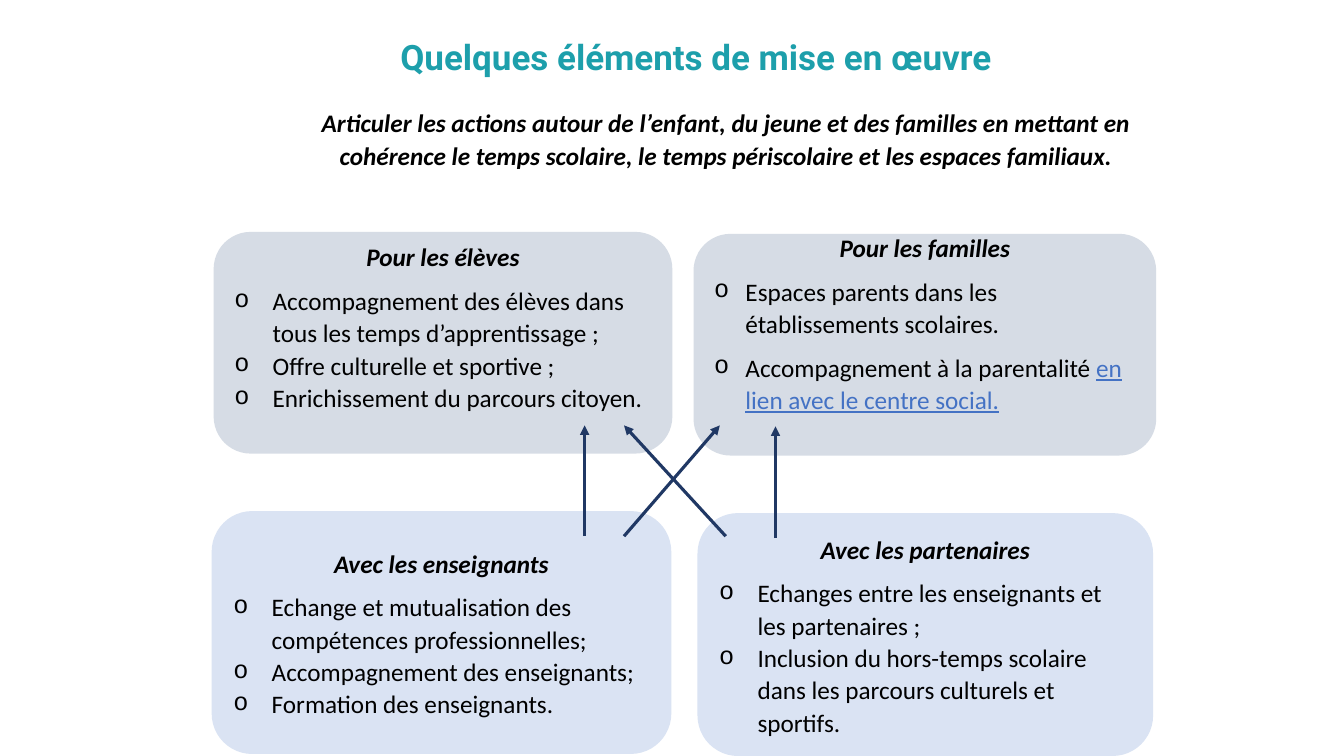
"""Build the slide on linking actions for pupils, families, teachers and partners."""
from lxml import etree
from pptx import Presentation, util as u
from pptx.dml.color import RGBColor
from pptx.enum import shapes, text
from pptx.oxml.ns import qn

THEME = dict(title="1D9FAB", ink="000000", link="4472C4", arrow="203864",
             top="D6DCE5", bottom="DAE3F3", body="Calibri", head="Roboto",
             title_size=25, size=18, line=2.25)

prs = Presentation()
prs.slide_width, prs.slide_height = u.Inches(13.33), u.Inches(7.5)
s = prs.slides.add_slide(prs.slide_layouts[6])
COL, ROW = prs.slide_width / 100, prs.slide_height / 100


def place(x, y, w, h):
    """Turn percentages of the slide into lengths."""
    return int(x * COL), int(y * ROW), int(w * COL), int(h * ROW)


def add_paragraph(tf, runs, heading=False, indent=0, after=0, spacing=1.07,
                  size=THEME["size"], font=THEME["body"], italic=True, color=THEME["ink"]):
    """Add a centred heading or a bulleted item made of (text, is_link) runs."""
    p = tf.paragraphs[0] if not tf.paragraphs[0].runs else tf.add_paragraph()
    p.alignment = text.PP_ALIGN.CENTER if heading else text.PP_ALIGN.LEFT
    p.line_spacing, p.space_after = spacing, u.Pt(after)
    if indent:
        pPr = p._p.get_or_add_pPr()
        pPr.set("marL", str(u.Inches(indent)))
        pPr.set("indent", str(-u.Inches(indent)))
        etree.SubElement(pPr, qn("a:buFont")).set("typeface", "Courier New")
        etree.SubElement(pPr, qn("a:buChar")).set("char", "o")
    for words, is_link in runs:
        r = p.add_run()
        r.text = words
        r.font.name, r.font.size = font, u.Pt(size)
        r.font.bold, r.font.italic = heading, heading and italic
        r.font.underline = is_link
        r.font.color.rgb = RGBColor.from_string(THEME["link"] if is_link else color)


cards = [
    ("bottom", (51.9, 67.87, 33.9, 32.13), 0.05, 0.38, 0, "Avec les partenaires", [
        [("Echanges entre les enseignants et les partenaires ;", False)],
        [("Inclusion du hors-temps scolaire dans les parcours culturels et sportifs.", False)]]),
    ("bottom", (15.75, 67.6, 34.2, 32.13), 0.05, 0.38, 0, "Avec les enseignants", [
        [("Echange et mutualisation des compétences professionnelles;", False)],
        [("Accompagnement des enseignants;", False)],
        [("Formation des enseignants.", False)]]),
    ("top", (51.6, 30.93, 34.43, 29.33), 0.49, 0.31, 8, "Pour les familles", [
        [("Espaces parents dans les établissements scolaires.", False)],
        [("Accompagnement à la parentalité ", False), ("en lien avec le centre social.", True)]]),
    ("top", (15.9, 30.67, 34.13, 29.33), 0.38, 0.38, 0, "Pour les élèves", [
        [("Accompagnement des élèves dans tous les temps d’apprentissage ;", False)],
        [("Offre culturelle et sportive ;", False)],
        [("Enrichissement du parcours citoyen.", False)]]),
]
for fill, box, inset, indent, after, heading, items in cards:
    sp = s.shapes.add_shape(shapes.MSO_SHAPE.ROUNDED_RECTANGLE, *place(*box))
    sp.shadow.inherit = False
    sp.fill.solid()
    sp.fill.fore_color.rgb = RGBColor.from_string(THEME[fill])
    sp.line.fill.background()
    tf = sp.text_frame
    tf.word_wrap = True
    tf.vertical_anchor = text.MSO_ANCHOR.MIDDLE
    tf.margin_bottom = u.Inches(inset)
    add_paragraph(tf, [(heading, False)], heading=True, after=8)
    for runs in items:
        add_paragraph(tf, runs, indent=indent, after=after)

banners = [
    ((6.98, 4, 89.57, 7.6), text.MSO_ANCHOR.MIDDLE, "Quelques éléments de mise en œuvre",
     dict(size=THEME["title_size"], font=THEME["head"], color=THEME["title"],
          italic=False, spacing=0.9)),
    ((20.48, 13.33, 67.07, 9.87), text.MSO_ANCHOR.TOP,
     "Articuler les actions autour de l’enfant, du jeune et des familles en mettant en "
     "cohérence le temps scolaire, le temps périscolaire et les espaces familiaux.",
     dict(after=8)),
]
for box, anchor, words, style in banners:
    tf = s.shapes.add_textbox(*place(*box)).text_frame
    tf.word_wrap = True
    tf.vertical_anchor = anchor
    add_paragraph(tf, [(words, False)], heading=True, **style)

arrows = [(43.5, 70.93, 43.5, 56.27), (46.43, 70.93, 53.56, 56.27),
          (54, 70.93, 46.43, 56.27), (57.7, 71.2, 57.7, 56.4)]
for ends in arrows:
    cx = s.shapes.add_connector(shapes.MSO_CONNECTOR.STRAIGHT, *place(*ends))
    cx.line.color.rgb = RGBColor.from_string(THEME["arrow"])
    cx.line.width = u.Pt(THEME["line"])
    etree.SubElement(cx.line._get_or_add_ln(), qn("a:tailEnd")).set("type", "triangle")
    etree.SubElement(cx._element.spPr, qn("a:effectLst"))

prs.save("out.pptx")
